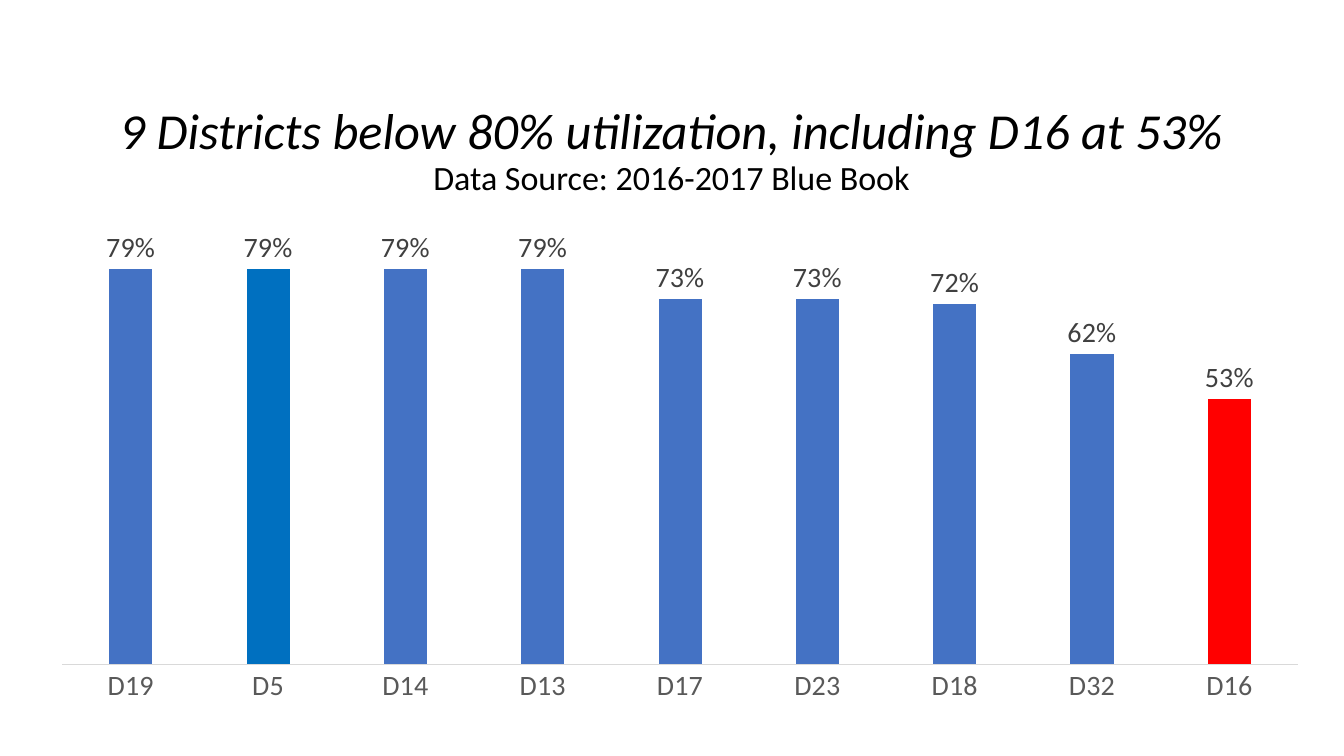
from lxml import etree
from pptx import Presentation
from pptx import util as u
from pptx.chart.data import CategoryChartData
from pptx.dml.color import RGBColor
from pptx.enum import chart as ch, text

PX = 9144  # 100 px to the inch
COLOURS = {"ink": "000000", "bar": "4472C4", "blue": "0070C0", "red": "FF0000",
           "axis": "595959", "label": "404040", "line": "D9D9D9"}
RATES = {"D19": 0.79, "D5": 0.79, "D14": 0.79, "D13": 0.79, "D17": 0.73,
         "D23": 0.73, "D18": 0.72, "D32": 0.62, "D16": 0.53}
MARKED = {"D5": "blue", "D16": "red"}
PLOT = {"x": 0.018, "y": 0.025, "w": 0.976, "h": 0.848}


def put(item, **values):
    for name, value in values.items():
        setattr(item, name, value)


class Deck:
    face = "Calibri"

    def __init__(self, wide, high):
        self.show = Presentation()
        put(self.show, slide_width=wide * PX, slide_height=high * PX)
        self.slide = self.show.slides.add_slide(self.show.slide_layouts[6])

    def hue(self, name):
        return RGBColor.from_string(COLOURS[name])

    def font(self, font, size, colour, **more):
        put(font, name=self.face, size=u.Pt(size), **more)
        font.color.rgb = self.hue(colour)

    def fill(self, part, colour):
        part.format.fill.solid()
        part.format.fill.fore_color.rgb = self.hue(colour)

    def title(self, box, lines):
        frame = self.slide.shapes.add_textbox(*(n * PX for n in box)).text_frame
        put(frame, word_wrap=True, margin_bottom=0,
            vertical_anchor=text.MSO_ANCHOR.BOTTOM)
        for i, (words, size, slant) in enumerate(lines):
            para = frame.add_paragraph() if i else frame.paragraphs[0]
            put(para, alignment=text.PP_ALIGN.CENTER, line_spacing=0.9)
            run = para.add_run()
            run.text = words
            self.font(run.font, size, "ink", italic=slant)

    def columns(self, box, rates, marked):
        data = CategoryChartData(number_format="0%")
        data.categories = list(rates)
        data.add_series("Series 1", list(rates.values()))
        chart = self.slide.shapes.add_chart(
            ch.XL_CHART_TYPE.COLUMN_CLUSTERED, *(n * PX for n in box), data).chart
        put(chart, has_legend=False, has_title=False)
        self.font(chart.font, 10, "ink")

        # Bars
        plot = chart.plots[0]
        put(plot, gap_width=219, overlap=-27, vary_by_categories=False,
            has_data_labels=True)
        series = plot.series[0]
        self.fill(series, "bar")
        for i, name in enumerate(rates):
            if name in marked:
                self.fill(series.points[i], marked[name])
        put(plot.data_labels, show_value=True, number_format="0%",
            number_format_is_linked=False,
            position=ch.XL_LABEL_POSITION.OUTSIDE_END)
        self.font(plot.data_labels.font, 20, "label")

        # Axes
        put(chart.value_axis, visible=False, has_major_gridlines=False,
            minimum_scale=0, maximum_scale=0.9)
        axis = chart.category_axis
        put(axis, major_tick_mark=ch.XL_TICK_MARK.NONE)
        self.font(axis.tick_labels.font, 20, "axis")
        axis.format.line.width = u.Pt(0.75)
        axis.format.line.color.rgb = self.hue("line")
        self.place(chart)

    def place(self, chart):
        area = chart._chartSpace.chart.plotArea
        space = etree.QName(area).namespace
        for old in area.findall(f"{{{space}}}layout"):
            area.remove(old)
        layout = etree.Element(f"{{{space}}}layout")
        manual = etree.SubElement(layout, f"{{{space}}}manualLayout")
        rules = {"layoutTarget": "inner", "xMode": "edge", "yMode": "edge", **PLOT}
        for tag, value in rules.items():
            etree.SubElement(manual, f"{{{space}}}{tag}", val=str(value))
        area.insert(0, layout)


def main():
    deck = Deck(1333, 750)
    # Heading and source line
    deck.title((10, 51, 1312, 145), [
        ("9 Districts below 80% utilization, including D16 at 53%", 36, True),
        ("Data Source: 2016-2017 Blue Book", 24.3, False)])
    # Utilization by district
    deck.columns((39, 199, 1256, 527), RATES, MARKED)
    deck.show.save("out.pptx")


if __name__ == "__main__":
    main()
